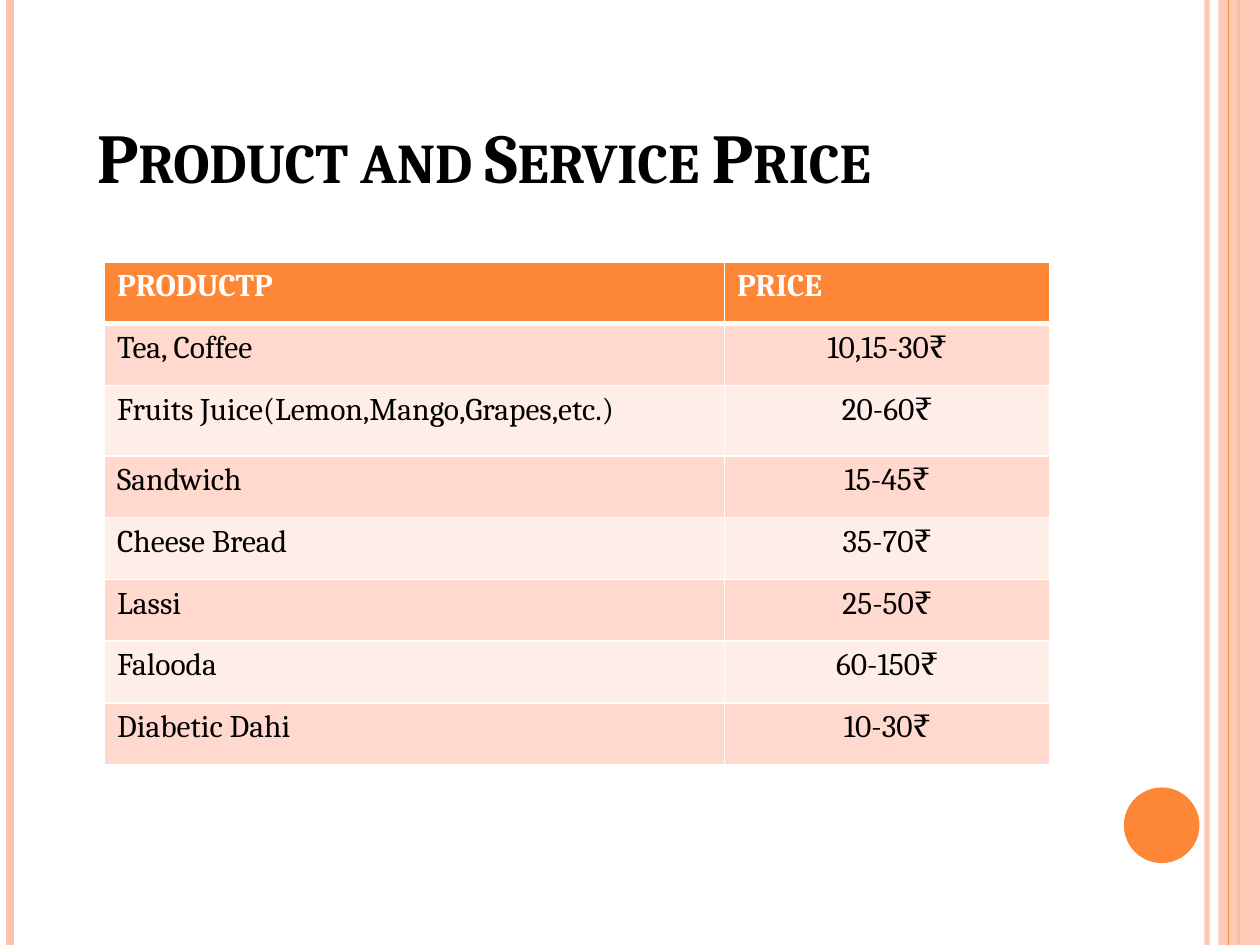
import dataclasses

import lxml.etree
import pptx
import pptx.dml.color
import pptx.enum.shapes
import pptx.enum.text
import pptx.oxml.ns
import pptx.util

Inches = pptx.util.Inches
Pt = pptx.util.Pt
qn = pptx.oxml.ns.qn


@dataclasses.dataclass(frozen=True)
class Theme:
    font: str = "Cambria"
    title_size: int = 40
    table_size: int = 18
    text: str = "000000"
    white: str = "FFFFFF"
    accent: str = "FE8637"
    stripe: str = "FEC3AE"
    bands: tuple = ("FFD9CE", "FFEDE8")


def rgb(color):
    return pptx.dml.color.RGBColor.from_string(color)


def set_opacity(element, percent):
    color = element.find(f".//{qn('a:srgbClr')}")
    lxml.etree.SubElement(color, qn("a:alpha"), val=str(percent * 1000))


class SlideBuilder:
    def __init__(self, slide, theme):
        self.slide = slide
        self.theme = theme

    def vertical_line(self, x, color, width, opacity=100):
        line = self.slide.shapes.add_connector(
            pptx.enum.shapes.MSO_CONNECTOR.STRAIGHT,
            Inches(x), Inches(0), Inches(x), Inches(7.5))
        line.line.color.rgb = rgb(color)
        line.line.width = Pt(width)
        properties = line._element.spPr
        if opacity < 100:
            set_opacity(properties, opacity)
        lxml.etree.SubElement(properties, qn("a:effectLst"))

    def filled_shape(self, kind, box, color, opacity=100):
        shape = self.slide.shapes.add_shape(kind, *map(Inches, box))
        shape.shadow.inherit = False
        shape.fill.solid()
        shape.fill.fore_color.rgb = rgb(color)
        shape.line.fill.background()
        if opacity < 100:
            set_opacity(shape._element.spPr, opacity)

    def style_paragraph(self, paragraph, size, color, bold):
        font = paragraph.font
        font.name = self.theme.font
        font.size = Pt(size)
        font.color.rgb = rgb(color)
        font.bold = bold

    def title(self, text, box):
        frame = self.slide.shapes.add_textbox(*map(Inches, box)).text_frame
        frame.word_wrap = True
        frame.vertical_anchor = pptx.enum.text.MSO_ANCHOR.BOTTOM
        frame.text = text
        paragraph = frame.paragraphs[0]
        self.style_paragraph(paragraph, self.theme.title_size, self.theme.text, True)
        paragraph._p.pPr.find(qn("a:defRPr")).set("cap", "small")

    def cell_borders(self, cell, widths):
        """Draw white borders; widths maps the sides L, R, T, B to points."""
        properties = cell._tc.get_or_add_tcPr()
        for index, (side, width) in enumerate(widths.items()):
            border = lxml.etree.Element(qn(f"a:ln{side}"), w=str(Pt(width)))
            fill = lxml.etree.SubElement(border, qn("a:solidFill"))
            lxml.etree.SubElement(fill, qn("a:srgbClr"), val=self.theme.white)
            properties.insert(index, border)

    def price_table(self, rows, box, column_widths, row_heights):
        theme = self.theme
        table = self.slide.shapes.add_table(
            len(rows), len(column_widths), *map(Inches, box)).table
        for column, width in zip(table.columns, column_widths):
            column.width = Inches(width)
        for row, height in zip(table.rows, row_heights):
            row.height = Inches(height)
        for r, values in enumerate(rows):
            header = r == 0
            for c, value in enumerate(values):
                cell = table.cell(r, c)
                cell.text = value
                cell.fill.solid()
                cell.fill.fore_color.rgb = rgb(
                    theme.accent if header else theme.bands[(r - 1) % 2])
                paragraph = cell.text_frame.paragraphs[0]
                self.style_paragraph(paragraph, theme.table_size,
                                     theme.white if header else theme.text, header)
                if c == 1 and not header:
                    paragraph.alignment = pptx.enum.text.PP_ALIGN.CENTER
                self.cell_borders(cell, {"L": 1, "R": 1, "T": 3 if r == 1 else 1,
                                         "B": 3 if header else 1})


PRICES = [
    ("PRODUCTP", "PRICE"),
    ("Tea, Coffee", "10,15-30₹"),
    ("Fruits Juice(Lemon,Mango,Grapes,etc.)", "20-60₹"),
    ("Sandwich", "15-45₹"),
    ("Cheese Bread", "35-70₹"),
    ("Lassi", "25-50₹"),
    ("Falooda", "60-150₹"),
    ("Diabetic Dahi", "10-30₹"),
]
JUICE_ROW = 2


def main():
    presentation = pptx.Presentation()
    presentation.slide_width = Inches(10)
    presentation.slide_height = Inches(7.5)
    theme = Theme()
    builder = SlideBuilder(
        presentation.slides.add_slide(presentation.slide_layouts[6]), theme)
    shapes = pptx.enum.shapes.MSO_SHAPE

    builder.vertical_line(9.58, theme.stripe, 3, opacity=93)
    builder.vertical_line(0.08, theme.stripe, 4.5)
    builder.vertical_line(9.83, theme.accent, 1.5)
    builder.filled_shape(shapes.RECTANGLE, (9.67, 0, 0.33, 7.5), theme.stripe, opacity=87)
    builder.vertical_line(9.75, theme.accent, 0.75)
    builder.filled_shape(shapes.OVAL, (8.92, 6.25, 0.6, 0.6), theme.accent)

    builder.title("Product and Service Price", (0.67, 0.75, 8.75, 0.87))
    row_heights = [0.56 if r == JUICE_ROW else 0.49 for r in range(len(PRICES))]
    builder.price_table(PRICES, (0.83, 2.08, 7.5, 4), (4.92, 2.58), row_heights)

    presentation.save("out.pptx")


if __name__ == "__main__":
    main()
